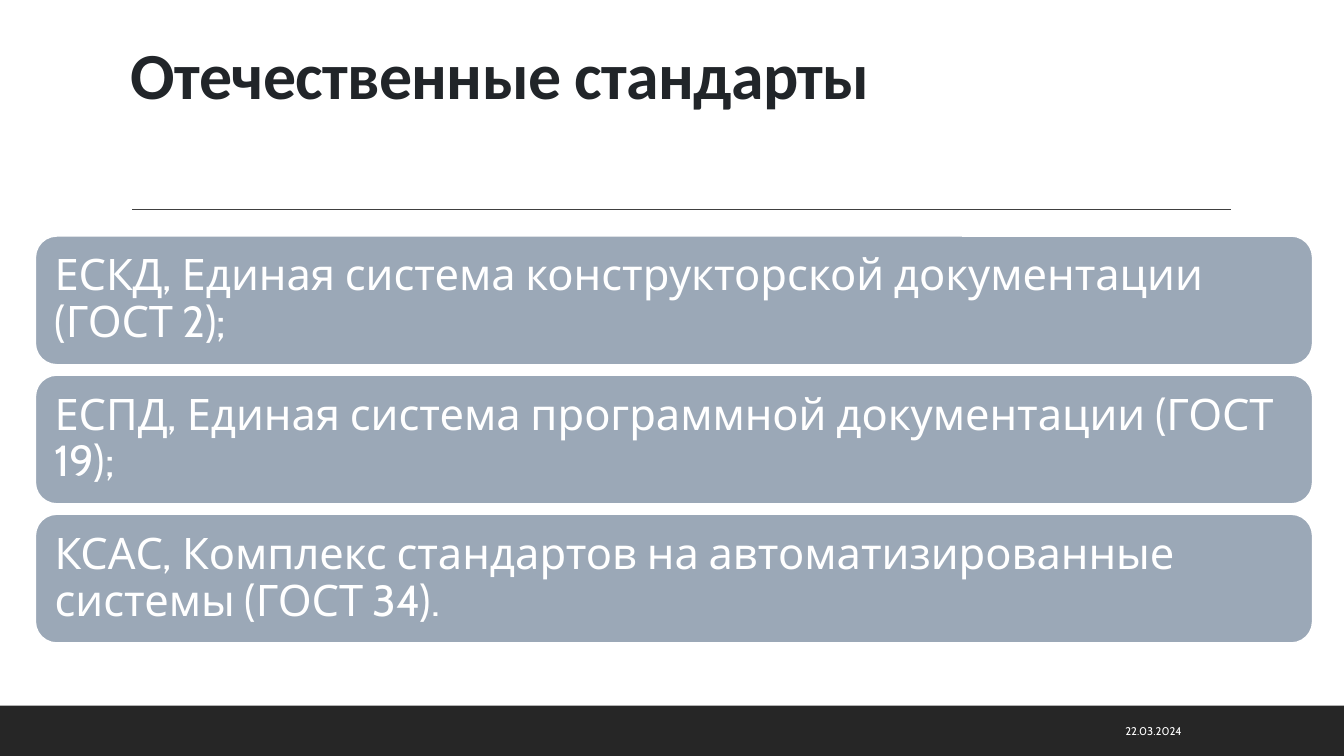
from lxml.etree import SubElement
from pptx import Presentation
from pptx.dml.color import RGBColor
from pptx.enum.shapes import MSO_CONNECTOR, MSO_SHAPE
from pptx.enum.text import MSO_ANCHOR, PP_ALIGN
from pptx.oxml.ns import qn
from pptx.util import Inches, Pt

TITLE = "Отечественные стандарты"
STANDARDS = [
    "ЕСКД, Единая система конструкторской документации (ГОСТ 2);",
    "ЕСПД, Единая система программной документации (ГОСТ 19);",
    "КСАС, Комплекс стандартов на автоматизированные системы (ГОСТ 34).",
]
DATE = "22.03.2024"

THEME = {
    "white": RGBColor.from_string("FFFFFF"),
    "footer": RGBColor.from_string("262626"),
    "rule": RGBColor.from_string("404040"),
    "card": RGBColor.from_string("9BA8B7"),
    "title": {"name": "Calibri", "size": Pt(47), "bold": True},
    "title_color": RGBColor.from_string("212529"),
    "body": {"name": "Cabin", "size": Pt(31)},
    "date": {"name": "Cabin", "size": Pt(8)},
}
CARD_LEFT, CARD_TOP, CARD_WIDTH, CARD_HEIGHT = 0.35, 2.34, 12.67, 1.28
CARD_PITCH = 1.38


def set_text(shape, text, font, color, frame_format, paragraph_format):
    frame = shape.text_frame
    frame.word_wrap = True
    for name, value in frame_format.items():
        setattr(frame, name, value)
    paragraph = frame.paragraphs[0]
    for name, value in paragraph_format.items():
        setattr(paragraph, name, value)
    run = paragraph.add_run()
    run.text = text
    for name, value in font.items():
        setattr(run.font, name, value)
    run.font.color.rgb = color
    return run


def add_block(slide, kind, box, fill):
    shape = slide.shapes.add_shape(kind, *map(Inches, box))
    shape.shadow.inherit = False
    shape.fill.solid()
    shape.fill.fore_color.rgb = fill
    shape.line.fill.background()
    return shape


def add_rule(slide, left, right, top):
    rule = slide.shapes.add_connector(
        MSO_CONNECTOR.STRAIGHT, Inches(left), Inches(top), Inches(right), Inches(top))
    rule.line.color.rgb = THEME["rule"]
    rule.line.width = Pt(1)
    SubElement(rule._element.spPr, qn("a:effectLst"))


def add_title(slide):
    box = slide.shapes.add_textbox(Inches(1.2), Inches(0.31), Inches(11), Inches(1.59))
    run = set_text(
        box, TITLE, THEME["title"], THEME["title_color"],
        {"vertical_anchor": MSO_ANCHOR.BOTTOM, "margin_bottom": Inches(0.77)},
        {"line_spacing": 0.9})
    run.font._element.set("spc", "-50")


def add_cards(slide):
    margins = ("margin_left", "margin_top", "margin_right", "margin_bottom")
    frame_format = dict.fromkeys(margins, Inches(0.13))
    frame_format["vertical_anchor"] = MSO_ANCHOR.MIDDLE
    for index, text in enumerate(STANDARDS):
        top = CARD_TOP + index * CARD_PITCH
        card = add_block(slide, MSO_SHAPE.ROUNDED_RECTANGLE,
                         (CARD_LEFT, top, CARD_WIDTH, CARD_HEIGHT), THEME["card"])
        card.line.color.rgb = THEME["white"]
        card.line.width = Pt(1.25)
        set_text(card, text, THEME["body"], THEME["white"], frame_format,
                 {"line_spacing": 0.9, "alignment": PP_ALIGN.LEFT})


def add_date(slide):
    box = slide.shapes.add_textbox(Inches(8.99), Inches(7.05), Inches(2.83), Inches(0.4))
    set_text(box, DATE, THEME["date"], THEME["white"],
             {"vertical_anchor": MSO_ANCHOR.MIDDLE}, {"alignment": PP_ALIGN.RIGHT})


def main():
    presentation = Presentation()
    presentation.slide_width = Inches(13.33)
    presentation.slide_height = Inches(7.5)
    slide = presentation.slides.add_slide(presentation.slide_layouts[6])
    add_block(slide, MSO_SHAPE.RECTANGLE, (0, 7, 13.33, 0.5), THEME["footer"])
    add_rule(slide, 1.31, 12.21, 2.08)
    add_title(slide)
    add_cards(slide)
    add_date(slide)
    presentation.save("out.pptx")


if __name__ == "__main__":
    main()
